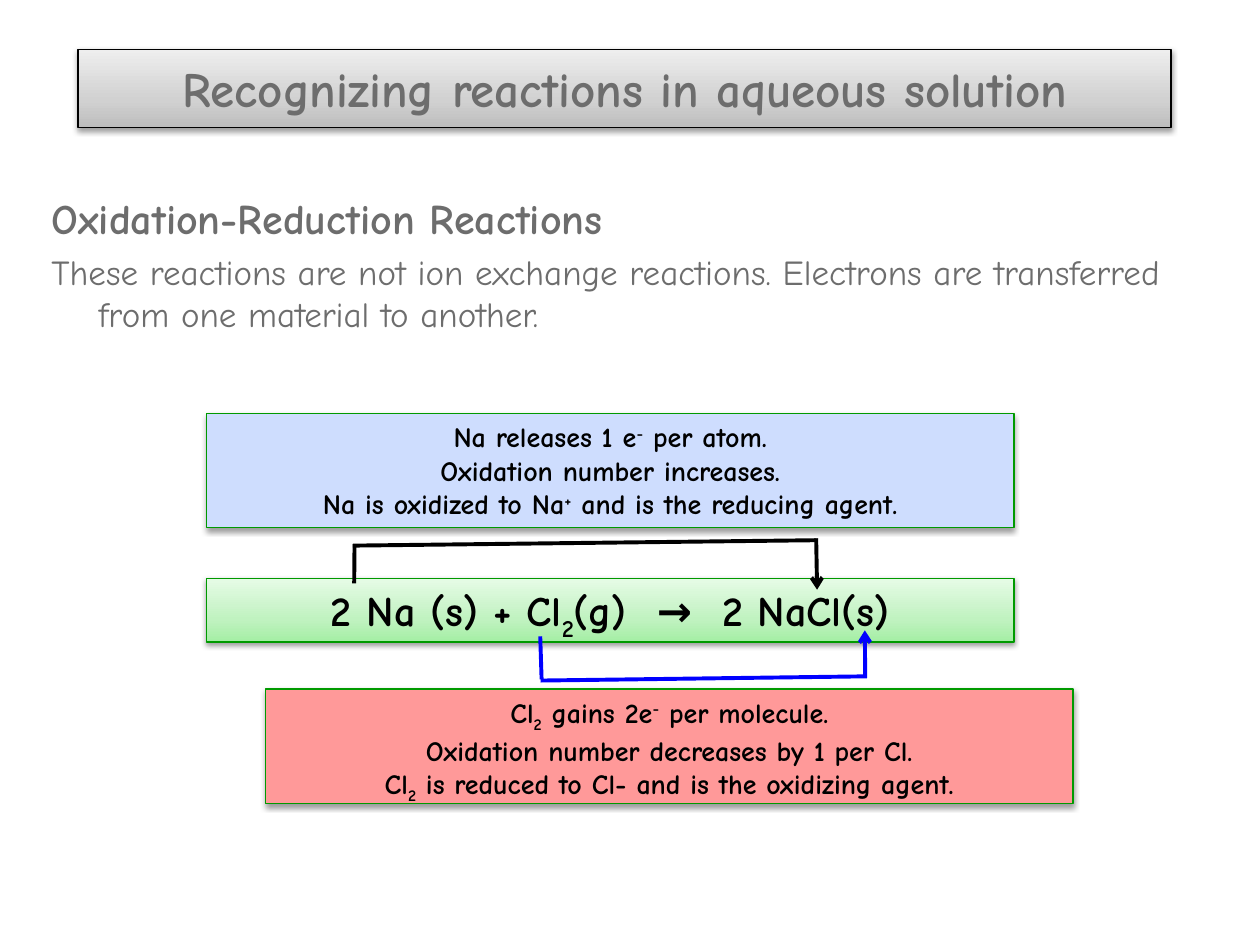
from copy import deepcopy
from dataclasses import dataclass

from lxml.etree import SubElement
from pptx import Presentation
from pptx.dml.color import RGBColor
from pptx.enum.shapes import MSO_CONNECTOR, MSO_SHAPE
from pptx.enum.text import MSO_ANCHOR, MSO_AUTO_SIZE, PP_ALIGN
from pptx.oxml.ns import qn
from pptx.util import Pt


@dataclass(frozen=True)
class Theme:
    font: str = "Comic Neue"
    gray: str = "6D6D6D"
    black: str = "000000"
    blue: str = "0000FF"
    green: str = "009A00"
    title_fill: tuple = ("BDBDBD", "D1D1D1", "EEEEEE")
    equation_fill: tuple = ("A4EEA4", "C0F2C0", "E6FBE6")
    oxidation_fill: tuple = ("CEDDFE",)
    reduction_fill: tuple = ("FF9999",)
    title_size: int = 28
    heading_size: int = 24
    body_size: int = 20
    note_size: int = 16


theme = Theme()
SUB, SUPER = -25000, 30000


def style_panel(panel, colors, border):
    if len(colors) == 1:
        panel.fill.solid()
        panel.fill.fore_color.rgb = RGBColor.from_string(colors[0])
    else:
        panel.fill.gradient()
        panel.fill.gradient_angle = 90
        stops = panel._element.spPr.find(".//" + qn("a:gsLst"))
        stops.append(deepcopy(stops[0]))
        for stop, position, color in zip(panel.fill.gradient_stops, (0, 0.35, 1), colors):
            stop.position = position
            stop.color.rgb = RGBColor.from_string(color)
    panel.line.color.rgb = RGBColor.from_string(border)
    panel.line.width = Pt(0.75)
    panel.shadow.inherit = False
    effects = panel._element.spPr.find(qn("a:effectLst"))
    shadow = SubElement(effects, qn("a:outerShdw"), blurRad=str(Pt(3.1)),
                        dist=str(Pt(1.6)), dir="5400000", rotWithShape="0")
    shade = SubElement(shadow, qn("a:srgbClr"), val=theme.black)
    SubElement(shade, qn("a:alpha"), val="38000")


def add_runs(paragraph, runs, size, color, bold=True):
    for text, baseline in runs:
        run = paragraph.add_run()
        run.text = text
        run.font.name = theme.font
        run.font.size = Pt(size)
        run.font.bold = bold
        run.font.color.rgb = RGBColor.from_string(color)
        if baseline:
            run._r.get_or_add_rPr().set("baseline", str(baseline))


prs = Presentation()
prs.slide_width, prs.slide_height = Pt(720), Pt(540)
slide = prs.slides.add_slide(prs.slide_layouts[5])

title = slide.shapes.title
title.left, title.top, title.width, title.height = Pt(44.6), Pt(28.1), Pt(624.6), Pt(44.8)
style_panel(title, theme.title_fill, theme.black)
title.text_frame.auto_size = MSO_AUTO_SIZE.NONE
title.text_frame.vertical_anchor = MSO_ANCHOR.MIDDLE
heading = title.text_frame.paragraphs[0]
heading.alignment = PP_ALIGN.CENTER
add_runs(heading, [("Recognizing reactions in aqueous solution", 0)], theme.title_size, theme.gray)

intro = slide.shapes.add_textbox(Pt(22.3), Pt(106.6), Pt(655), Pt(118)).text_frame
intro.word_wrap = True
intro_lines = [
    ("Oxidation-Reduction Reactions", theme.heading_size, True),
    ("These reactions are not ion exchange reactions. Electrons are transferred "
     "from one material to another.", theme.body_size, False),
]
for index, (text, size, bold) in enumerate(intro_lines):
    paragraph = intro.add_paragraph() if index else intro.paragraphs[0]
    paragraph.space_before = Pt(size * 0.2)
    properties = paragraph._p.get_or_add_pPr()
    properties.set("marL", str(Pt(27)))
    properties.set("indent", str(-Pt(27)))
    add_runs(paragraph, [(text, 0)], size, theme.gray, bold)

equation = [[("2 Na (s) + Cl", 0), ("2", SUB), ("(g)  →  2 NaCl(s)", 0)]]
oxidation = [
    [("Na releases 1 e", 0), ("-", SUPER), (" per atom.", 0)],
    [("Oxidation number increases.", 0)],
    [("Na is oxidized to Na", 0), ("+", SUPER), (" and is the reducing agent.", 0)],
]
reduction = [
    [("Cl", 0), ("2", SUB), (" gains 2e", 0), ("-", SUPER), (" per molecule.", 0)],
    [("Oxidation number decreases by 1 per Cl.", 0)],
    [("Cl", 0), ("2", SUB), (" is reduced to Cl- and is the oxidizing agent.", 0)],
]
panels = [
    (118, 330.5, 36.4, theme.equation_fill, theme.heading_size, equation),
    (118, 236.2, 65.4, theme.oxidation_fill, theme.note_size, oxidation),
    (151.8, 393.7, 65.4, theme.reduction_fill, theme.note_size, reduction),
]
for left, top, height, colors, size, lines in panels:
    panel = slide.shapes.add_shape(MSO_SHAPE.RECTANGLE, Pt(left), Pt(top), Pt(461.4), Pt(height))
    style_panel(panel, colors, theme.green)
    frame = panel.text_frame
    frame.word_wrap = True
    frame.auto_size = MSO_AUTO_SIZE.SHAPE_TO_FIT_TEXT
    frame.vertical_anchor = MSO_ANCHOR.TOP
    for index, runs in enumerate(lines):
        paragraph = frame.add_paragraph() if index else frame.paragraphs[0]
        paragraph.alignment = PP_ALIGN.CENTER
        add_runs(paragraph, runs, size, theme.black)

electron_paths = [
    (theme.black, [(202.6, 311, 202.4, 333.4), (201.6, 311.8, 466.6, 308.7),
                   (466.4, 307.6, 466.9, 337)]),
    (theme.blue, [(309.5, 388.2, 308.7, 363.6), (308.9, 388.9, 495.3, 386.5),
                  (494.4, 387.3, 494.2, 360.2)]),
]
for color, segments in electron_paths:
    for segment in segments:
        connector = slide.shapes.add_connector(MSO_CONNECTOR.STRAIGHT, *map(Pt, segment))
        connector.line.color.rgb = RGBColor.from_string(color)
        connector.line.width = Pt(2.25)
        SubElement(connector._element.spPr, qn("a:effectLst"))
    SubElement(connector.line._get_or_add_ln(), qn("a:tailEnd"), type="arrow")

prs.save("out.pptx")
